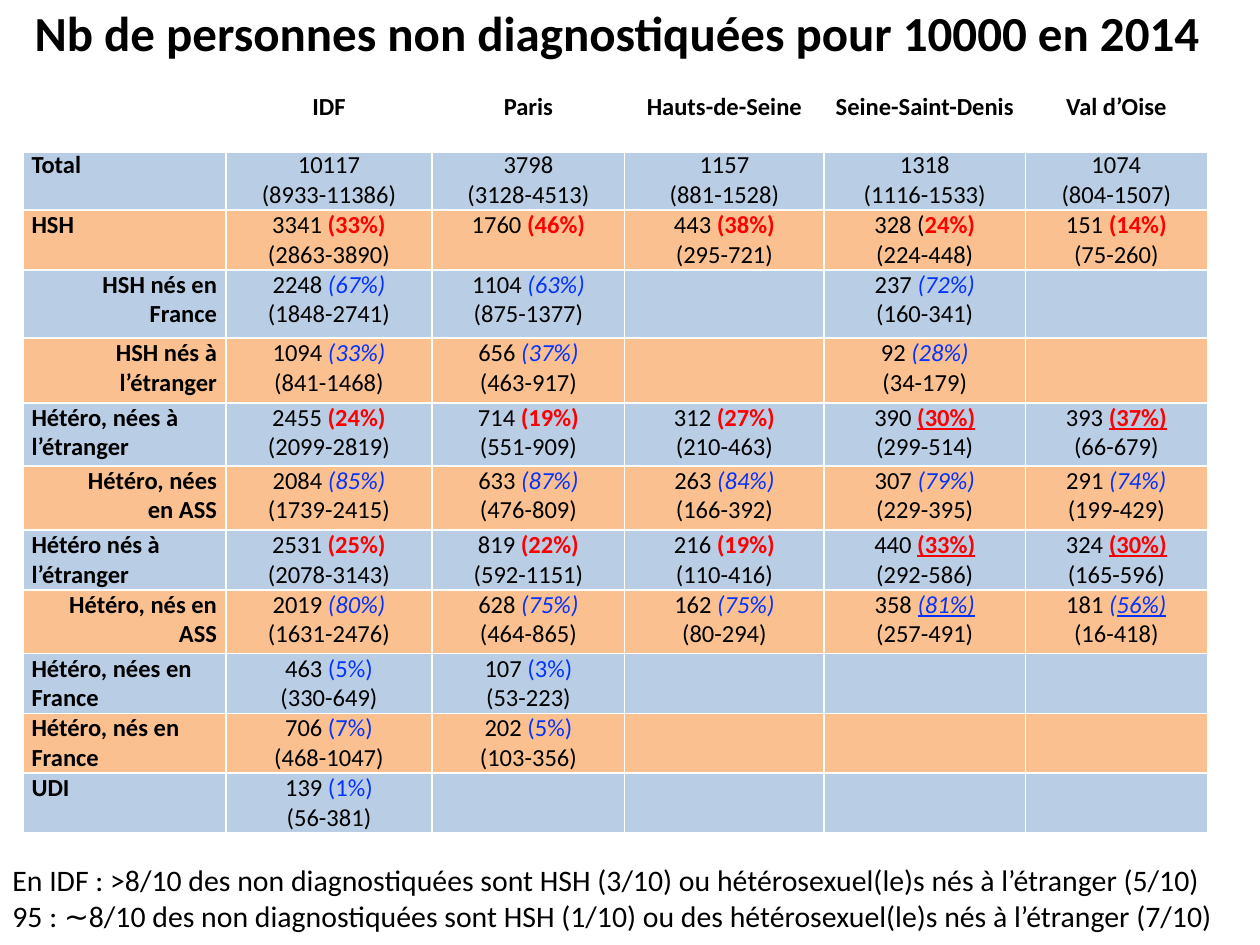
from pptx import Presentation
from pptx.dml.color import RGBColor
from pptx.enum.text import MSO_ANCHOR, PP_ALIGN
from pptx.oxml import parse_xml
from pptx.oxml.ns import nsdecls
from pptx.util import Pt

COLORS = {"text": "000000", "red": "FF0000", "blue": "0432FF",
          "blue_row": "B9CDE5", "orange_row": "FAC090", "border": "FFFFFF"}
FONT = "Calibri"
TITLE = "Nb de personnes non diagnostiquées pour 10000 en 2014"
NOTES = [
    "En IDF : >8/10 des non diagnostiquées sont HSH (3/10) ou hétérosexuel(le)s nés à l’étranger (5/10)",
    "95 : ∼8/10 des non diagnostiquées sont HSH (1/10) ou des hétérosexuel(le)s nés à l’étranger (7/10)",
]
REGIONS = ["IDF", "Paris", "Hauts-de-Seine", "Seine-Saint-Denis", "Val d’Oise"]
COLUMN_WIDTHS = [116, 118, 110, 114, 115, 104]
HEADER_HEIGHT = 33.4

# Cell format: count|share|interval, with "_" where underlining starts in the share.
ROWS = [
    ("Total", "total", 33.4, ["10117||(8933-11386)", "3798||(3128-4513)", "1157||(881-1528)",
                              "1318||(1116-1533)", "1074||(804-1507)"]),
    ("HSH", "group", 33.4, ["3341 |(33%)|(2863-3890)", "1760 |(46%)|", "443 |(38%)|(295-721)",
                            "328 (|24%)|(224-448)", "151 |(14%)|(75-260)"]),
    ("HSH nés en France", "nested", 39, ["2248 |(67%)|(1848-2741)", "1104 |(63%)|(875-1377)", "",
                                         "237 |(72%)|(160-341)", ""]),
    ("HSH nés à l’étranger", "nested", 37, ["1094 |(33%)|(841-1468)", "656 |(37%)|(463-917)", "",
                                            "92 |(28%)|(34-179)", ""]),
    ("Hétéro, nées à l’étranger", "group", 36, ["2455 |(24%)|(2099-2819)", "714| (19%)|(551-909)",
                                                "312| (27%)|(210-463)", "390 |_(30%)|(299-514)",
                                                "393 |_(37%)|(66-679)"]),
    ("Hétéro, nées en ASS", "nested", 36.8, ["2084 |(85%)|(1739-2415)", "633 |(87%)|(476-809)",
                                             "263 |(84%)|(166-392)", "307 |(79%)|(229-395)",
                                             "291 |(74%)|(199-429)"]),
    ("Hétéro nés à l’étranger", "group", 33.4, ["2531 |(25%)|(2078-3143)", "819 |(22%)|(592-1151)",
                                                "216| (19%)|(110-416)", "440 |_(33%)|(292-586)",
                                                "324 |_(30%)|(165-596)"]),
    ("Hétéro, nés en ASS", "nested", 36.5, ["2019 |(80%)|(1631-2476)", "628 |(75%)|(464-865)",
                                            "162 |(75%)|(80-294)", "358 |_(81%)|(257-491)",
                                            "181 |(_56%)|(16-418)"]),
    ("Hétéro, nées en France", "minor", 33.4, ["463 |(5%)|(330-649)", "107 |(3%)|(53-223)", "", "", ""]),
    ("Hétéro, nés en France", "minor", 33.4, ["706 |(7%)|(468-1047)", "202 |(5%)|(103-356)", "", "", ""]),
    ("UDI", "minor", 33.4, ["139 |(1%)|(56-381)", "", "", "", ""]),
]
SHARE_STYLES = {"total": ("text", False, False), "group": ("red", True, False),
                "nested": ("blue", False, True), "minor": ("blue", False, False)}


def rgb(name):
    return RGBColor.from_string(COLORS[name])


def style_paragraph(paragraph, size, bold=False, align=PP_ALIGN.LEFT):
    paragraph.alignment = align
    font = paragraph.font
    font.name, font.size, font.bold = FONT, Pt(size), bold
    font.color.rgb = rgb("text")


def style_cell(cell, fill, bottom_width=1):
    cell.margin_left = cell.margin_right = Pt(5)
    cell.margin_top = cell.margin_bottom = 0
    properties = cell._tc.get_or_add_tcPr()
    for side in ("L", "R", "T", "B"):
        width = Pt(bottom_width if side == "B" else 1)
        properties.append(parse_xml(
            f'<a:ln{side} {nsdecls("a")} w="{width}"><a:solidFill>'
            f'<a:srgbClr val="{COLORS["border"]}"/></a:solidFill></a:ln{side}>'))
    if fill:
        cell.fill.solid()
        cell.fill.fore_color.rgb = rgb(fill)
    else:
        cell.fill.background()


def write_label(cell, text, align):
    cell.text = text
    style_paragraph(cell.text_frame.paragraphs[0], 14, True, align)


def write_estimate(cell, value, kind):
    count, share, interval = value.split("|")
    paragraph = cell.text_frame.paragraphs[0]
    style_paragraph(paragraph, 14, align=PP_ALIGN.CENTER)
    paragraph.add_run().text = count
    color, bold, italic = SHARE_STYLES[kind]
    plain, _, underlined = share.partition("_")
    for text, underline in ((plain, False), (underlined, True)):
        if text:
            run = paragraph.add_run()
            run.text = text
            run.font.color.rgb = rgb(color)
            run.font.bold, run.font.italic, run.font.underline = bold, italic, underline
    if interval:
        paragraph = cell.text_frame.add_paragraph()
        paragraph.text = interval
        style_paragraph(paragraph, 14, align=PP_ALIGN.CENTER)


def add_estimates_table(slide):
    heights = [HEADER_HEIGHT] + [row[2] for row in ROWS]
    table = slide.shapes.add_table(
        len(heights), len(COLUMN_WIDTHS), Pt(13), Pt(52.6),
        Pt(sum(COLUMN_WIDTHS)), Pt(sum(heights))).table
    for column, width in zip(table.columns, COLUMN_WIDTHS):
        column.width = Pt(width)
    for row, height in zip(table.rows, heights):
        row.height = Pt(height)
    for cell in table.rows[0].cells:
        style_cell(cell, None, 3)
    for column, region in enumerate(REGIONS, 1):
        write_label(table.cell(0, column), region, PP_ALIGN.CENTER)
    for index, (label, kind, _, values) in enumerate(ROWS, 1):
        for cell in table.rows[index].cells:
            style_cell(cell, "blue_row" if index % 2 else "orange_row")
        label_cell = table.cell(index, 0)
        write_label(label_cell, label, PP_ALIGN.RIGHT if kind == "nested" else PP_ALIGN.LEFT)
        if kind == "nested":
            label_cell.margin_left = Pt(23)
        for column, value in enumerate(values, 1):
            if value:
                write_estimate(table.cell(index, column), value, kind)


def add_text(slide, box, lines, size, bold=False, align=PP_ALIGN.LEFT, wrap=True):
    frame = slide.shapes.add_textbox(*map(Pt, box)).text_frame
    frame.word_wrap = wrap
    frame.vertical_anchor = MSO_ANCHOR.MIDDLE if bold else MSO_ANCHOR.TOP
    frame.text = "\n".join(lines)
    for paragraph in frame.paragraphs:
        style_paragraph(paragraph, size, bold, align)


def main():
    presentation = Presentation()
    presentation.slide_width, presentation.slide_height = Pt(720), Pt(540)
    slide = presentation.slides.add_slide(presentation.slide_layouts[6])
    add_estimates_table(slide)
    add_text(slide, (0, 489, 703, 48), NOTES, 17, wrap=False)
    add_text(slide, (-6, -16.5, 717, 70), [TITLE], 28, True, PP_ALIGN.CENTER)
    presentation.save("out.pptx")


if __name__ == "__main__":
    main()
